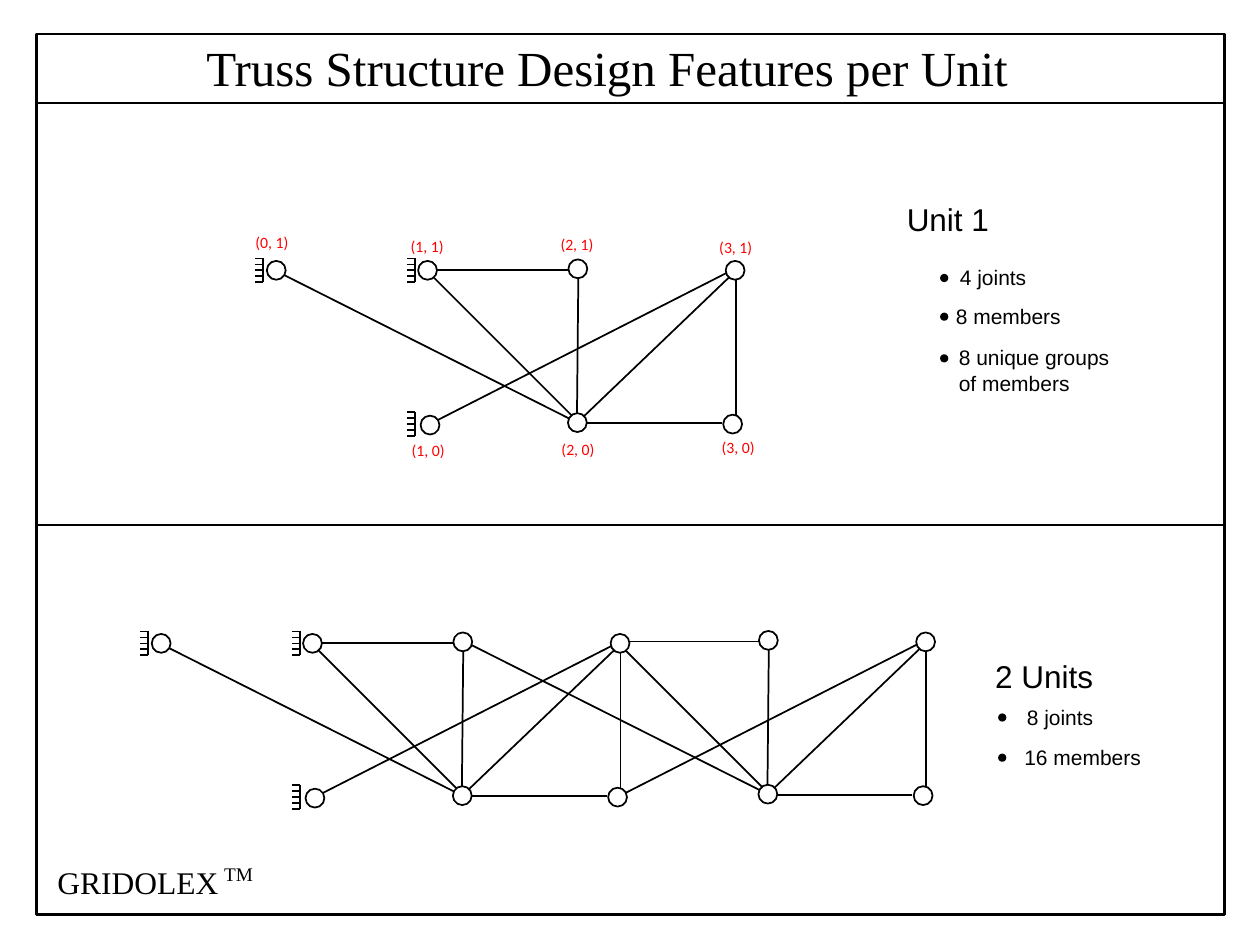
from lxml.etree import SubElement
from pptx import Presentation
from pptx.dml.color import RGBColor
from pptx.enum.shapes import MSO_CONNECTOR, MSO_SHAPE
from pptx.enum.text import PP_ALIGN
from pptx.oxml.ns import qn
from pptx.util import Cm, Pt

COLORS = {"ink": "000000", "paper": "FFFFFF", "label": "FF0000"}
SANS, SERIF, SMALL = "Arial", "Times New Roman", "Calibri"

JOINTS = {
    (2, 1): (11.65, 5.42), (3, 1): (14.82, 5.45),
    (3, 0): (14.77, 8.55), (2, 0): (11.64, 8.52),
    (1, 1): (8.62, 5.45), (1, 0): (8.67, 8.57), (0, 1): (5.57, 5.45),
}
SHARED_JOINTS = [(1, 1), (1, 0), (0, 1)]
MEMBERS = [
    ((14.73, 5.46), (8.74, 8.51)), ((11.73, 8.43), (14.73, 5.56)),
    ((5.56, 5.46), (11.56, 8.48)), ((11.63, 8.46), (11.66, 5.44)),
    ((14.83, 8.48), (14.83, 5.46)), ((8.66, 5.44), (11.66, 5.44)),
    ((11.53, 8.53), (14.55, 8.53)), ((11.63, 8.48), (8.61, 5.46)),
]
SUPPORTS = [(8.37, 5.21), (5.31, 5.21), (8.37, 8.31)]
JOINT_LABELS = {
    (3, 1): (14.25, 4.67), (0, 1): (4.9, 4.57), (1, 0): (8.05, 8.76),
    (1, 1): (8.03, 4.65), (3, 0): (14.3, 8.71), (2, 0): (11.07, 8.74),
    (2, 1): (11.05, 4.6),
}
FIRST_UNIT, LEFT_UNIT, RIGHT_UNIT = (0, 0), (-2.32, 7.52), (3.84, 7.49)


class TrussSlide:
    """Draws truss diagrams and text on one slide in a single style."""

    def __init__(self, slide):
        self.slide = slide

    def rgb(self, name):
        return RGBColor.from_string(COLORS[name])

    def line(self, start, end, weight=1, shapes=None):
        shapes = self.slide.shapes if shapes is None else shapes
        connector = shapes.add_connector(
            MSO_CONNECTOR.STRAIGHT, *(Cm(value) for value in (*start, *end)))
        connector.line.color.rgb = self.rgb("ink")
        connector.line.width = Pt(weight)
        SubElement(connector._element.spPr, qn("a:effectLst"))

    def shape(self, kind, box, fill=None, weight=1, shapes=None):
        shapes = self.slide.shapes if shapes is None else shapes
        outline = shapes.add_shape(kind, *(Cm(value) for value in box))
        outline.shadow.inherit = False
        if fill:
            outline.fill.solid()
            outline.fill.fore_color.rgb = self.rgb(fill)
        else:
            outline.fill.background()
        outline.line.color.rgb = self.rgb("ink")
        outline.line.width = Pt(weight)

    def text(self, wording, box, size, font=SANS, color="ink",
             align=PP_ALIGN.LEFT, wrap=True):
        frame = self.slide.shapes.add_textbox(
            *(Cm(value) for value in box)).text_frame
        frame.word_wrap = wrap
        frame.text = wording
        paragraph = frame.paragraphs[0]
        paragraph.alignment = align
        for run in paragraph.runs:
            run.font.size = Pt(size)
            run.font.name = font
            run.font.color.rgb = self.rgb(color)

    def bullet(self, wording, dot, left, width, height=0.76):
        self.shape(MSO_SHAPE.OVAL, (*dot, 0.13, 0.13), "ink")
        self.text(wording, (left, dot[1] - 0.33, width, height), 12)

    def unit(self, shift, joints):
        dx, dy = shift
        shapes = self.slide.shapes.add_group_shape().shapes
        for (x1, y1), (x2, y2) in MEMBERS:
            self.line((x1 + dx, y1 + dy), (x2 + dx, y2 + dy), shapes=shapes)
        diameter = 0.38
        for joint in joints:
            x, y = JOINTS[joint]
            self.shape(MSO_SHAPE.OVAL,
                       (x + dx - diameter / 2, y + dy - diameter / 2,
                        diameter, diameter), "paper", shapes=shapes)

    def support(self, x, y):
        shapes = self.slide.shapes.add_group_shape().shapes
        self.line((x, y), (x, y + 0.48), shapes=shapes)
        for step in range(5):
            tooth = y + step * 0.12
            self.line((x, tooth), (x - 0.17, tooth), shapes=shapes)


def main():
    deck = Presentation()
    deck.slide_width, deck.slide_height = Cm(25.4), Cm(19.05)
    truss = TrussSlide(deck.slides.add_slide(deck.slide_layouts[6]))

    left, right = 0.74, 24.69
    truss.shape(MSO_SHAPE.RECTANGLE, (left, 0.69, right - left, 17.75), weight=1.5)
    for y, weight in ((10.59, 1), (2.08, 1.5)):
        truss.line((left, y), (right, y), weight)
    truss.text("Truss Structure Design Features per Unit",
               (3.86, 0.64, 16.76, 1.45), 28, SERIF, align=PP_ALIGN.CENTER)

    own_joints = [joint for joint in JOINTS if joint not in SHARED_JOINTS]
    truss.unit(FIRST_UNIT, JOINTS)
    truss.unit(RIGHT_UNIT, own_joints)
    truss.unit(LEFT_UNIT, JOINTS)
    for dx, dy in (FIRST_UNIT, LEFT_UNIT):
        for x, y in SUPPORTS:
            truss.support(x + dx, y + dy)
    for joint, corner in JOINT_LABELS.items():
        truss.text(f"({joint[0]}, {joint[1]})", (*corner, 1.19, 0.64), 9,
                   SMALL, "label", wrap=False)

    truss.text("Unit 1", (18.03, 3.91, 2.31, 1.02), 18)
    truss.bullet("4 joints", (18.97, 5.54), 19.1, 2.31)
    truss.bullet("8 members", (18.97, 6.32), 19.02, 2.95)
    truss.bullet("8 unique groups of members", (18.97, 7.16), 19.08, 3.78, 1.27)

    truss.text("2 Units", (19.81, 13.13, 3.07, 1.02), 18)
    truss.bullet("8 joints", (20.14, 14.4), 20.45, 2.08)
    truss.bullet("16 members", (20.14, 15.21), 20.4, 2.87)

    truss.text("GRIDOLEX", (0.91, 17.27, 3.86, 1.02), 18, SERIF, wrap=False)
    truss.text("TM", (4.27, 17.25, 1.3, 0.7), 11, SERIF)
    deck.save("out.pptx")


if __name__ == "__main__":
    main()
